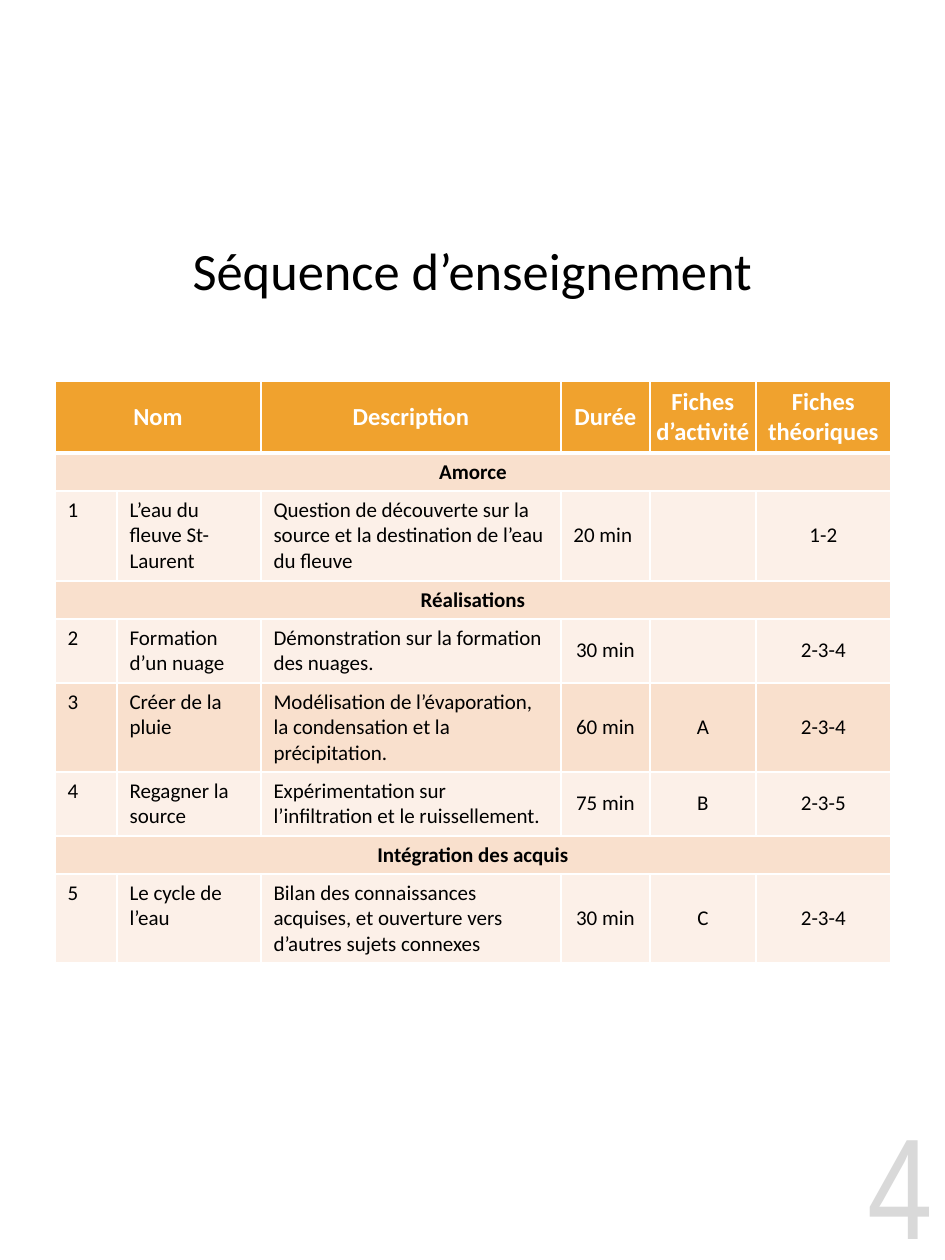
from lxml import etree
from pptx import Presentation, util as u
from pptx.dml.color import RGBColor
from pptx.enum import text
from pptx.oxml import ns

WHITE = RGBColor(0xFF, 0xFF, 0xFF)
BLACK = RGBColor(0, 0, 0)
GREY = RGBColor(0xD9, 0xD9, 0xD9)
ORANGE = RGBColor(0xF0, 0xA2, 0x2E)
PEACH = RGBColor(0xF9, 0xE0, 0xCD)
CREAM = RGBColor(0xFC, 0xF0, 0xE8)

# Content: a one-item row is a section heading across the table
TITLE = "Séquence d’enseignement"
PAGE = "4"
ROWS = [
    ("Nom", "", "Description", "Durée", "Fiches d’activité", "Fiches théoriques"),
    ("Amorce",),
    ("1", "L’eau du fleuve St-Laurent",
     "Question de découverte sur la source et la destination de l’eau du fleuve",
     "20 min", "", "1-2"),
    ("Réalisations",),
    ("2", "Formation d’un nuage", "Démonstration sur la formation des nuages.",
     "30 min", "", "2-3-4"),
    ("3", "Créer de la pluie",
     "Modélisation de l’évaporation, la condensation et la précipitation.",
     "60 min", "A", "2-3-4"),
    ("4", "Regagner la source",
     "Expérimentation sur l’infiltration et le ruissellement.",
     "75 min", "B", "2-3-5"),
    ("Intégration des acquis",),
    ("5", "Le cycle de l’eau",
     "Bilan des connaissances acquises, et ouverture vers d’autres sujets connexes",
     "30 min", "C", "2-3-4"),
]
COL_WIDTHS = [62, 144, 300, 89, 106, 135]
ROW_HEIGHTS = [72, 37, 90, 38, 64, 89, 64, 38, 89]
LEFT, TOP = 55, 381
LEFT_ALIGN, CENTER, RIGHT = (text.PP_ALIGN.LEFT, text.PP_ALIGN.CENTER,
                             text.PP_ALIGN.RIGHT)
MIDDLE = text.MSO_ANCHOR.MIDDLE


def px(n):
    return u.Emu(round(n * 914400 / 126))


def style(p, size, color, align, bold=False, font="Calibri"):
    p.alignment = align
    p.font.size, p.font.name, p.font.bold = u.Pt(size), font, bold
    p.font.color.rgb = color


def add_text(s, box, content, *look, **font):
    tf = s.shapes.add_textbox(*map(px, box)).text_frame
    tf.word_wrap = True
    tf.vertical_anchor = MIDDLE
    tf.text = content
    style(tf.paragraphs[0], *look, **font)


def set_borders(cell, bottom):
    tc_pr = cell._tc.get_or_add_tcPr()
    for i, (side, width) in enumerate(zip("LRTB", (1, 1, 1, bottom))):
        ln = etree.Element(ns.qn(f"a:ln{side}"), w=str(u.Pt(width)))
        fill = etree.SubElement(ln, ns.qn("a:solidFill"))
        etree.SubElement(fill, ns.qn("a:srgbClr"), val=str(WHITE))
        tc_pr.insert(i, ln)


prs = Presentation()
prs.slide_width, prs.slide_height = px(945), px(1260)
s = prs.slides.add_slide(prs.slide_layouts[6])

# Page number and title
add_text(s, (791, 1104, 154, 156), PAGE, 82, GREY, RIGHT, font="Arial Narrow")
add_text(s, (0, 210, 945, 120), TITLE, 30, BLACK, CENTER)

# Table grid
table = s.shapes.add_table(len(ROWS), len(COL_WIDTHS), px(LEFT), px(TOP),
                           px(sum(COL_WIDTHS)), px(sum(ROW_HEIGHTS))).table
for col, width in zip(table.columns, COL_WIDTHS):
    col.width = px(width)
for row, height in zip(table.rows, ROW_HEIGHTS):
    row.height = px(height)

# Table cells
for i, values in enumerate(ROWS):
    header, section = i == 0, len(values) == 1
    for j in range(len(COL_WIDTHS)):
        cell = table.cell(i, j)
        cell.text = values[j] if j < len(values) else ""
        cell.fill.solid()
        cell.fill.fore_color.rgb = ORANGE if header else PEACH if i % 2 else CREAM
        set_borders(cell, 3 if header else 1)
        centered = header or section or j > 2
        if centered and values != ("Amorce",):
            cell.vertical_anchor = MIDDLE
        if header and j > 2:
            cell.margin_left = cell.margin_right = px(5)
        left = not centered or (i, j) == (2, 3)
        style(cell.text_frame.paragraphs[0], 14 if header else 12,
              WHITE if header else BLACK, LEFT_ALIGN if left else CENTER,
              bold=header or section)
    if section:
        table.cell(i, 0).merge(table.cell(i, len(COL_WIDTHS) - 1))
table.cell(0, 0).merge(table.cell(0, 1))

prs.save("out.pptx")
